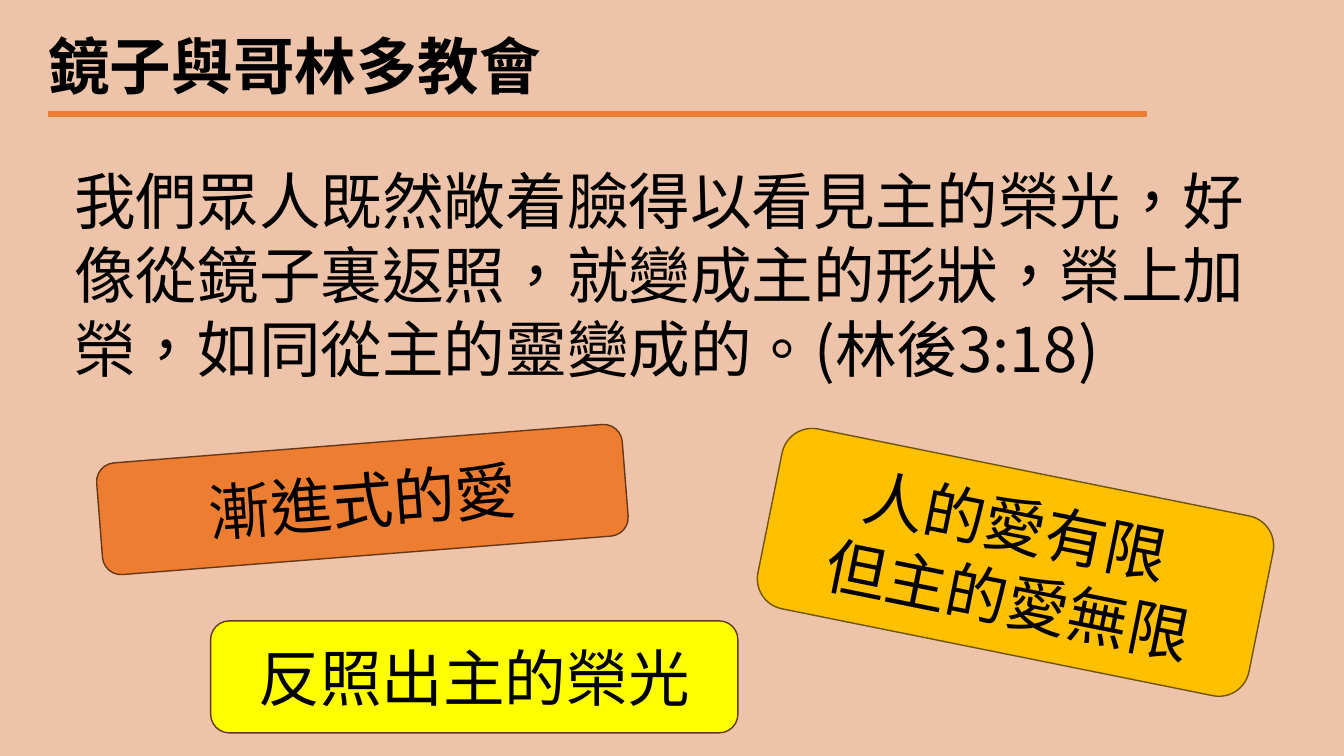
"""Build the slide about the mirror and the Corinthian church."""
import pptx
import pptx.dml.color
import pptx.enum.lang
import pptx.enum.shapes
import pptx.enum.text
import pptx.oxml
import pptx.util

Pt = pptx.util.Pt


def color(value):
    return pptx.dml.color.RGBColor.from_string(value)


def write_text(shape, text, font="Calibri", size=44, ink="000000", bold=False,
               align=pptx.enum.text.PP_ALIGN.LEFT,
               anchor=pptx.enum.text.MSO_ANCHOR.TOP):
    frame = shape.text_frame
    frame.word_wrap = True
    frame.vertical_anchor = anchor
    frame.text = text
    for paragraph in frame.paragraphs:
        paragraph.alignment = align
        for run in paragraph.runs:
            run.font.size = Pt(size)
            run.font.bold = bold
            run.font.color.rgb = color(ink)
            run.font.name = font
            run.font.language_id = pptx.enum.lang.MSO_LANGUAGE_ID.TRADITIONAL_CHINESE


class SlideBuilder:
    accent = "ED7D31"
    outline = "683715"

    def __init__(self, presentation, background):
        self.slide = presentation.slides.add_slide(presentation.slide_layouts[6])
        self.slide.background.fill.solid()
        self.slide.background.fill.fore_color.rgb = color(background)

    def text(self, box, text, **style):
        shape = self.slide.shapes.add_textbox(*map(Pt, box))
        write_text(shape, text, **style)

    def card(self, box, text, fill, outline=outline, rotation=0):
        shape = self.slide.shapes.add_shape(
            pptx.enum.shapes.MSO_SHAPE.ROUNDED_RECTANGLE, *map(Pt, box))
        shape.shadow.inherit = False
        shape.rotation = rotation
        shape.fill.solid()
        shape.fill.fore_color.rgb = color(fill)
        shape.line.color.rgb = color(outline)
        shape.line.width = Pt(1)
        write_text(shape, text, align=pptx.enum.text.PP_ALIGN.CENTER,
                   anchor=pptx.enum.text.MSO_ANCHOR.MIDDLE)

    def rule(self, left, right, top, width):
        connector = self.slide.shapes.add_connector(
            pptx.enum.shapes.MSO_CONNECTOR.STRAIGHT, *map(Pt, (left, top, right, top)))
        connector.line.color.rgb = color(self.accent)
        connector.line.width = Pt(width)
        properties = connector._element.spPr
        properties.append(pptx.oxml.parse_xml(
            '<a:effectLst xmlns:a="http://schemas.openxmlformats.org/drawingml/2006/main"/>'))


def main():
    presentation = pptx.Presentation()
    presentation.slide_width = Pt(960)
    presentation.slide_height = Pt(540)
    builder = SlideBuilder(presentation, "EDC3A9")
    builder.text((46, 113, 867.6, 167),
                 "我們眾人既然敞着臉得以看見主的榮光，好像從鏡子裏返照，"
                 "就變成主的形狀，榮上加榮，如同從主的靈變成的。(林後3:18)",
                 font="Noto Sans CJK SC")
    builder.card((546.5, 336.2, 357.8, 131), "人的愛有限 \n但主的愛無限",
                 "FFC000", outline="705400", rotation=11.4)
    builder.card((70.6, 316.8, 376.6, 80), "漸進式的愛", builder.accent, rotation=355.5)
    builder.text((27.4, 16.6, 844.6, 60.5), "鏡子與哥林多教會", bold=True)
    builder.rule(34.5, 819.4, 81.4, 4.5)
    builder.card((150.5, 443.5, 376.6, 80), "反照出主的榮光", "FFFF00")
    presentation.save("out.pptx")


if __name__ == "__main__":
    main()
